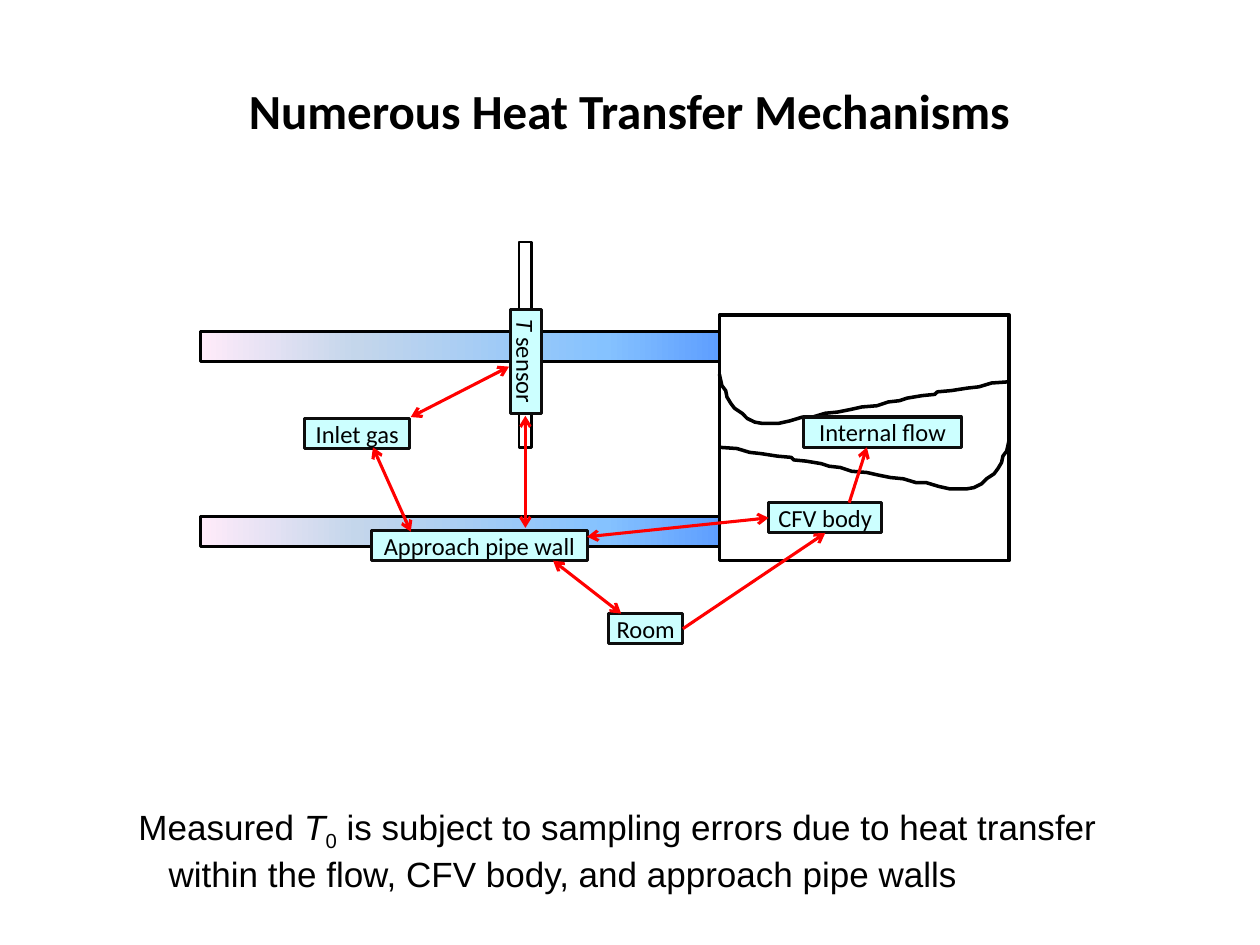
from copy import deepcopy
from dataclasses import dataclass

from lxml.etree import SubElement
from pptx import Presentation
from pptx.dml.color import RGBColor
from pptx.enum.shapes import MSO_CONNECTOR, MSO_SHAPE
from pptx.enum.text import MSO_ANCHOR, MSO_AUTO_SIZE, PP_ALIGN
from pptx.oxml.ns import qn
from pptx.util import Inches, Pt


@dataclass(frozen=True)
class Theme:
    heading_font: str = "Calibri"
    body_font: str = "Arial"
    title_size: int = 28
    body_size: int = 20
    label_size: int = 14
    ink: str = "000000"
    label_line: str = "0D0D0D"
    label_fill: str = "CCFFFF"
    probe_fill: str = "FFFFFF"
    arrow: str = "FF0000"
    pipe_stops: tuple = ((0, "5E9EFF"), (0.22, "85C2FF"), (0.7, "C4D6EB"), (1, "FFEBFA"))
    body_width: float = 2
    pipe_width: float = 1.5
    label_width: float = 1.75


def rgb(value):
    return RGBColor.from_string(value)


class SlideBuilder:
    def __init__(self, slide, theme):
        self.slide = slide
        self.theme = theme

    def add_runs(self, paragraph, runs, font, size, bold=False):
        """Add runs given as (text, style), style being "", "italic" or "subscript"."""
        for text, style in runs:
            run = paragraph.add_run()
            run.text = text
            run.font.name = font
            run.font.size = Pt(size)
            run.font.bold = bold
            run.font.italic = style == "italic"
            run.font.color.rgb = rgb(self.theme.ink)
            if style == "subscript":
                run.font._element.set("baseline", "-25000")

    def outline(self, shape, color, width):
        shape.line.color.rgb = rgb(color)
        shape.line.width = Pt(width)

    def title(self, text, left, top, width, height):
        shape = self.slide.shapes.title
        shape.left, shape.top = Inches(left), Inches(top)
        shape.width, shape.height = Inches(width), Inches(height)
        frame = shape.text_frame
        frame.vertical_anchor = MSO_ANCHOR.MIDDLE
        frame.paragraphs[0].alignment = PP_ALIGN.CENTER
        self.add_runs(frame.paragraphs[0], [(text, "")],
                      self.theme.heading_font, self.theme.title_size, bold=True)

    def hanging_text(self, runs, left, top, width, height, indent):
        shape = self.slide.shapes.add_textbox(
            Inches(left), Inches(top), Inches(width), Inches(height))
        frame = shape.text_frame
        frame.word_wrap = True
        frame.auto_size = MSO_AUTO_SIZE.SHAPE_TO_FIT_TEXT
        paragraph = frame.paragraphs[0]
        properties = paragraph._p.get_or_add_pPr()
        properties.set("marL", str(Inches(indent)))
        properties.set("indent", str(-Inches(indent)))
        self.add_runs(paragraph, runs, self.theme.body_font, self.theme.body_size)

    def rectangle(self, left, top, width, height, line, line_width, fill=None):
        shape = self.slide.shapes.add_shape(
            MSO_SHAPE.RECTANGLE, Inches(left), Inches(top), Inches(width), Inches(height))
        shape.shadow.inherit = False
        if fill:
            shape.fill.solid()
            shape.fill.fore_color.rgb = rgb(fill)
        else:
            shape.fill.background()
        self.outline(shape, line, line_width)
        return shape

    def pipe_wall(self, left, top, width, height):
        shape = self.rectangle(left, top, width, height, self.theme.ink, self.theme.pipe_width)
        shape.fill.gradient()
        shape.fill.gradient_angle = 180
        stop_list = shape._element.spPr.find(".//" + qn("a:gsLst"))
        while len(stop_list) < len(self.theme.pipe_stops):
            stop_list.append(deepcopy(stop_list[0]))
        for stop, (position, color) in zip(shape.fill.gradient_stops, self.theme.pipe_stops):
            stop.position = position
            stop.color.rgb = rgb(color)

    def label(self, runs, left, top, width, height=0.24, rotation=0):
        shape = self.rectangle(left, top, width, height, self.theme.label_line,
                               self.theme.label_width, self.theme.label_fill)
        shape.rotation = rotation
        frame = shape.text_frame
        frame.word_wrap = False
        frame.vertical_anchor = MSO_ANCHOR.MIDDLE
        frame.margin_left = frame.margin_right = Inches(0.05)
        frame.margin_top = frame.margin_bottom = 0
        frame.paragraphs[0].alignment = PP_ALIGN.CENTER
        self.add_runs(frame.paragraphs[0], runs, self.theme.heading_font, self.theme.label_size)
        return shape

    def curve(self, points):
        points = [(Inches(x), Inches(y)) for x, y in points]
        builder = self.slide.shapes.build_freeform(*points[0])
        builder.add_line_segments(points[1:], close=False)
        shape = builder.convert_to_shape()
        shape.shadow.inherit = False
        shape.fill.background()
        self.outline(shape, self.theme.ink, self.theme.body_width)

    def arrow(self, start, end, both_ways=True, begin=None, finish=None):
        """Draw an arrow; begin and finish are (shape, side) pairs to join."""
        connector = self.slide.shapes.add_connector(
            MSO_CONNECTOR.STRAIGHT, *(Inches(value) for value in (*start, *end)))
        if begin:
            connector.begin_connect(*begin)
        if finish:
            connector.end_connect(*finish)
        self.outline(connector, self.theme.arrow, self.theme.label_width)
        properties = connector._element.spPr
        line = properties.get_or_add_ln()
        for tag in ("a:headEnd", "a:tailEnd") if both_ways else ("a:tailEnd",):
            SubElement(line, qn(tag), type="arrow")
        SubElement(properties, qn("a:effectLst"))


BODY_LEFT, BODY_TOP, BODY_WIDTH, BODY_HEIGHT = 5.71, 2.5, 2.3, 1.95
LOWER_CURVE_DROP = 0.52
UPPER_CURVE = [
    (5.71, 2.97), (5.73, 3.06), (5.76, 3.1), (5.77, 3.15), (5.8, 3.2), (5.83, 3.24),
    (5.89, 3.28), (5.93, 3.32), (5.99, 3.35), (6.05, 3.36), (6.18, 3.36), (6.27, 3.34),
    (6.37, 3.31), (6.45, 3.31), (6.55, 3.28), (6.65, 3.27), (6.75, 3.25), (6.84, 3.23),
    (6.96, 3.22), (7.05, 3.19), (7.14, 3.18), (7.2, 3.16), (7.32, 3.14), (7.42, 3.13),
    (7.44, 3.11), (7.55, 3.1), (7.68, 3.08), (7.77, 3.07), (7.87, 3.04), (8.01, 3.03),
]


def main():
    presentation = Presentation()
    presentation.slide_width, presentation.slide_height = Inches(10), Inches(7.5)
    slide = presentation.slides.add_slide(presentation.slide_layouts[5])
    theme = Theme()
    builder = SlideBuilder(slide, theme)

    builder.title("Numerous Heat Transfer Mechanisms", 0.83, 0.5, 8.33, 0.75)
    builder.hanging_text(
        [("Measured ", ""), ("T", "italic"), ("0", "subscript"),
         (" is subject to sampling errors due to heat transfer within the flow, "
          "CFV body, and approach pipe walls", "")],
        1, 6.34, 7.85, 0.77, indent=0.24)

    builder.curve(UPPER_CURVE)
    builder.rectangle(BODY_LEFT, BODY_TOP, BODY_WIDTH, BODY_HEIGHT, theme.ink, theme.body_width)
    mirror = 2 * BODY_LEFT + BODY_WIDTH
    builder.curve([(mirror - x, y + LOWER_CURVE_DROP) for x, y in UPPER_CURVE])
    for top in (2.63, 4.1):
        builder.pipe_wall(1.59, top, 4.12, 0.24)
    builder.rectangle(4.12, 1.92, 0.1, 1.63, theme.ink, theme.pipe_width, theme.probe_fill)

    builder.label([("Internal flow", "")], 6.38, 3.31, 1.25)
    cfv_body = builder.label([("CFV body", "")], 6.1, 3.99, 0.9)
    room = builder.label([("Room", "")], 4.83, 4.87, 0.59)
    builder.label([("Approach pipe wall", "")], 2.95, 4.21, 1.71)
    builder.label([("Inlet gas", "")], 2.42, 3.32, 0.83)
    builder.label([("T", "italic"), (" sensor", "")], 3.76, 2.75, 0.83, rotation=90)

    builder.arrow((5.42, 4.99), (6.56, 4.22), both_ways=False,
                  begin=(room, 3), finish=(cfv_body, 2))
    builder.arrow((6.74, 3.99), (6.88, 3.55), both_ways=False)
    builder.arrow((3.26, 4.22), (2.96, 3.55))
    builder.arrow((4.39, 4.45), (4.93, 4.87))
    builder.arrow((4.17, 4.19), (4.17, 3.3))
    builder.arrow((4.04, 2.91), (3.26, 3.31))
    builder.arrow((4.66, 4.26), (6.1, 4.1), finish=(cfv_body, 1))

    presentation.save("out.pptx")


if __name__ == "__main__":
    main()
